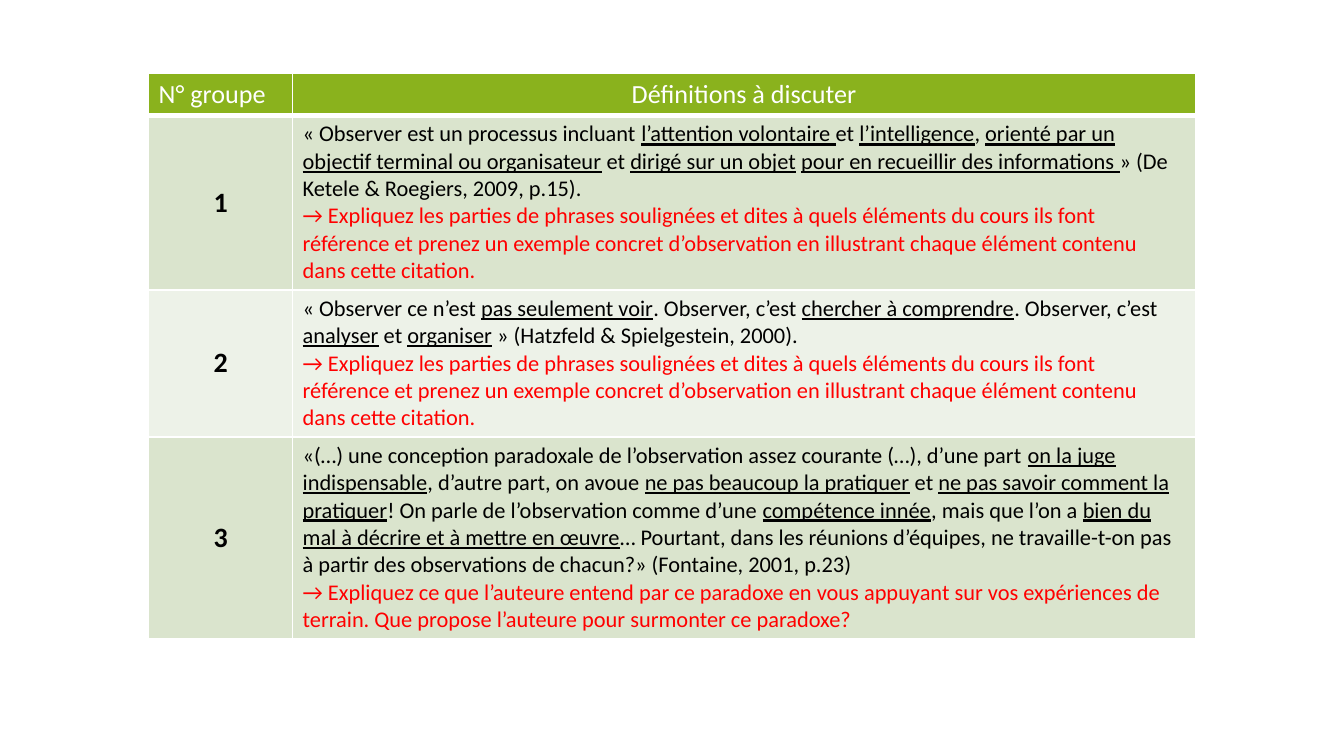
from lxml import etree
from pptx import Presentation
from pptx.dml.color import RGBColor
from pptx.enum.text import MSO_ANCHOR, PP_ALIGN
from pptx.oxml.ns import qn
from pptx.util import Cm, Pt

LEFT, CENTER = PP_ALIGN.LEFT, PP_ALIGN.CENTER
TOP, MIDDLE = MSO_ANCHOR.TOP, MSO_ANCHOR.MIDDLE

WHITE, BLACK, RED = "FFFFFF", "000000", "FF0000"
GREEN, BANDS = "8AB21D", ("DAE4CD", "EDF2E8")

COLS = (2.72, 17.07)
ROWS = (0.77, 3.24, 2.72, 3.77)

EXPLAIN = (
    "→ Expliquez les parties de phrases soulignées et dites à quels éléments "
    "du cours ils font référence et prenez un exemple concret d’observation "
    "en illustrant chaque élément contenu dans cette citation."
)
# Underscores enclose the underlined passages.
GROUPS = (
    ("« Observer est un processus incluant _l’attention volontaire _et "
     "_l’intelligence_, _orienté par un objectif terminal ou organisateur_ et "
     "_dirigé sur un objet_ _pour en recueillir des informations _» "
     "(De Ketele & Roegiers, 2009, p.15).",
     EXPLAIN),
    ("« Observer ce n’est _pas seulement voir_. Observer, c’est "
     "_chercher à comprendre_. Observer, c’est _analyser_ et _organiser_ » "
     "(Hatzfeld & Spielgestein, 2000).",
     EXPLAIN),
    ("«(…) une conception paradoxale de l’observation assez courante (…), "
     "d’une part _on la juge indispensable_, d’autre part, on avoue "
     "_ne pas beaucoup la pratiquer_ et _ne pas savoir comment la pratiquer_! "
     "On parle de l’observation comme d’une _compétence innée_, mais que l’on "
     "a _bien du mal à décrire et à mettre en œuvre_… Pourtant, dans les "
     "réunions d’équipes, ne travaille-t-on pas à partir des observations de "
     "chacun?» (Fontaine, 2001, p.23)",
     "→ Expliquez ce que l’auteure entend par ce paradoxe en vous appuyant sur "
     "vos expériences de terrain. Que propose l’auteure pour surmonter ce "
     "paradoxe?"),
)


def color(code):
    return RGBColor.from_string(code)


class Deck:
    font = "Calibri"

    def __init__(self, wide, high):
        self.prs = Presentation()
        self.prs.slide_width, self.prs.slide_height = Cm(wide), Cm(high)
        self.slide = self.prs.slides.add_slide(self.prs.slide_layouts[6])

    def table(self, left, top, cols, rows):
        frame = self.slide.shapes.add_table(
            len(rows), len(cols), Cm(left), Cm(top), Cm(sum(cols)), Cm(sum(rows)))
        grid = frame.table
        for col, width in zip(grid.columns, cols):
            col.width = Cm(width)
        for row, height in zip(grid.rows, rows):
            row.height = Cm(height)
        return grid

    def cell(self, cell, fill, anchor=TOP, base=1):
        """Style a cell; base is the width of its bottom border in points."""
        cell.margin_left = cell.margin_right = Cm(0.19)
        cell.margin_top = cell.margin_bottom = Cm(0.1)
        cell.vertical_anchor = anchor
        props = cell._tc.get_or_add_tcPr()
        for side, width in (("L", 1), ("R", 1), ("T", 1), ("B", base)):
            line = etree.SubElement(props, qn(f"a:ln{side}"), w=str(Pt(width)))
            paint = etree.SubElement(line, qn("a:solidFill"))
            etree.SubElement(paint, qn("a:srgbClr"), val=WHITE)
        cell.fill.solid()
        cell.fill.fore_color.rgb = color(fill)

    def text(self, para, text, size, ink, bold=False, align=LEFT):
        para.alignment = align
        for i, part in enumerate(text.split("_")):
            run = para.add_run()
            run.text = part
            font = run.font
            font.name, font.size, font.bold = self.font, Pt(size), bold
            font.underline = i % 2 == 1
            font.color.rgb = color(ink)


def main():
    deck = Deck(25.4, 14.29)
    grid = deck.table(2.81, 1.38, COLS, ROWS)

    heads = (("N° groupe", LEFT, TOP), ("Définitions à discuter", CENTER, MIDDLE))
    for col, (label, align, anchor) in enumerate(heads):
        cell = grid.cell(0, col)
        deck.cell(cell, GREEN, anchor, base=3)
        deck.text(cell.text_frame.paragraphs[0], label, 14, WHITE, align=align)

    for row, (quote, task) in enumerate(GROUPS, 1):
        fill = BANDS[(row - 1) % 2]
        number, body = grid.cell(row, 0), grid.cell(row, 1)
        deck.cell(number, fill, MIDDLE)
        deck.text(number.text_frame.paragraphs[0], str(row), 15, BLACK, True, CENTER)
        deck.cell(body, fill)
        deck.text(body.text_frame.paragraphs[0], quote, 12, BLACK)
        deck.text(body.text_frame.add_paragraph(), task, 12, RED)

    deck.prs.save("out.pptx")


if __name__ == "__main__":
    main()
